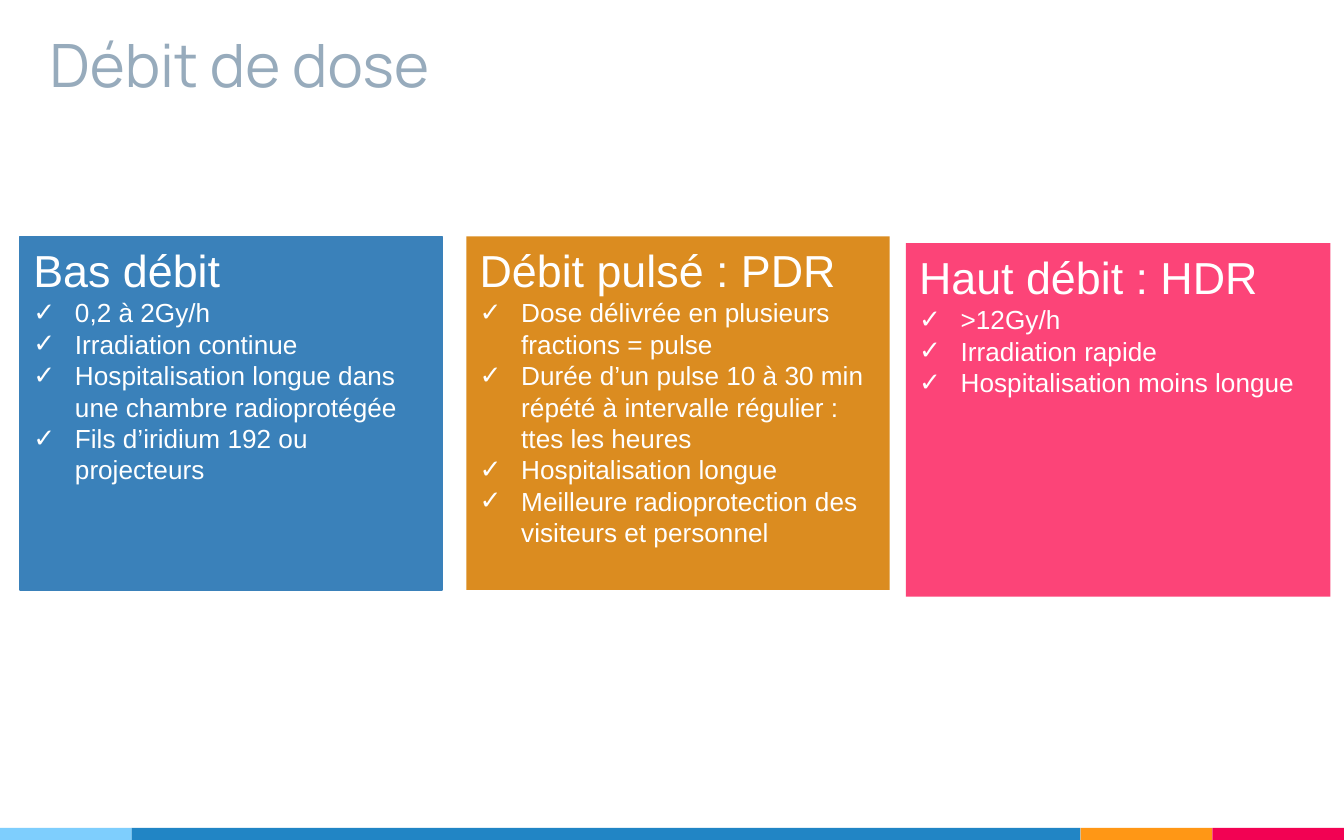
from lxml.etree import SubElement
from pptx import Presentation
from pptx.dml.color import RGBColor
from pptx.enum.shapes import MSO_SHAPE as Shape
from pptx.enum.text import MSO_ANCHOR as Anchor, MSO_AUTO_SIZE as AutoSize, PP_ALIGN as Align
from pptx.oxml.ns import qn
from pptx.util import Inches, Pt

WIDTH, HEIGHT = 10, 6.25
STRIPE_HEIGHT = 0.09
STRIPE_END = 0.98  # width of each short stripe
CARD_HEIGHT = 2.63
HANGING = Inches(0.31)

STRIPES = [  # colour, width
    ("7ECEFD", STRIPE_END),
    ("2185C5", WIDTH - 3 * STRIPE_END),
    ("FF9715", STRIPE_END),
    ("F20253", STRIPE_END),
]

CARDS = [  # left, top, width, fill, outline, heading, points
    (0.15, 1.76, 3.14, "3A81BA", "3A81BA", "Bas débit", [
        "0,2 à 2Gy/h",
        "Irradiation continue",
        "Hospitalisation longue dans une chambre radioprotégée",
        "Fils d’iridium 192 ou projecteurs",
    ]),
    (3.47, 1.76, 3.15, "DB8C20", None, "Débit pulsé : PDR", [
        "Dose délivrée en plusieurs fractions = pulse",
        "Durée d’un pulse 10 à 30 min répété à intervalle régulier : ttes les heures",
        "Hospitalisation longue",
        "Meilleure radioprotection des visiteurs et personnel",
    ]),
    (6.74, 1.81, 3.16, "FC4478", None, "Haut débit : HDR", [
        ">12Gy/h",
        "Irradiation rapide",
        "Hospitalisation moins longue",
    ]),
]


def colour(value):
    return RGBColor.from_string(value)


def write(para, text, size=14, font="Arial", fill="FFFFFF", bullet=None):
    para.alignment = Align.LEFT
    if bullet:
        props = para._p.get_or_add_pPr()
        props.set("marL", str(HANGING))
        props.set("indent", str(-HANGING))
        SubElement(props, qn("a:buFont"), typeface="Arial")
        SubElement(props, qn("a:buChar"), char=bullet)
    span = para.add_run()
    span.text = text
    span.font.size = Pt(size)
    span.font.name = font
    span.font.color.rgb = colour(fill)


def add_block(page, left, top, width, height, fill, outline=None):
    block = page.shapes.add_shape(
        Shape.RECTANGLE, Inches(left), Inches(top), Inches(width), Inches(height))
    block.shadow.inherit = False
    block.fill.solid()
    block.fill.fore_color.rgb = colour(fill)
    if outline:
        block.line.color.rgb = colour(outline)
        block.line.width = Pt(0.75)
    else:
        block.line.fill.background()
    return block


def add_stripes(page):
    left = 0
    for fill, width in STRIPES:
        add_block(page, left, HEIGHT - STRIPE_HEIGHT, width, STRIPE_HEIGHT, fill)
        left += width


def add_title(page, text):
    title = page.shapes.title
    title.left, title.top = Inches(0.27), Inches(0.15)
    title.width, title.height = Inches(7.07), Inches(0.69)
    frame = title.text_frame
    frame.auto_size = AutoSize.NONE
    frame.vertical_anchor = Anchor.BOTTOM
    frame.margin_left = frame.margin_right = Inches(0.1)
    frame.margin_top = frame.margin_bottom = Inches(0.1)
    write(frame.paragraphs[0], text, size=32, font="Manrope", fill="97ABBC")


def add_card(page, left, top, width, fill, outline, heading, points):
    card = add_block(page, left, top, width, CARD_HEIGHT, fill, outline)
    frame = card.text_frame
    frame.word_wrap = True
    frame.vertical_anchor = Anchor.TOP
    write(frame.paragraphs[0], heading, size=24)
    for point in points:
        write(frame.add_paragraph(), point, bullet="✓")


def main():
    deck = Presentation()
    deck.slide_width, deck.slide_height = Inches(WIDTH), Inches(HEIGHT)
    page = deck.slides.add_slide(deck.slide_layouts[5])  # title only

    # Footer band, title, then the three dose rates
    add_stripes(page)
    add_title(page, "Débit de dose")
    for card in CARDS:
        add_card(page, *card)

    deck.save("out.pptx")


if __name__ == "__main__":
    main()
